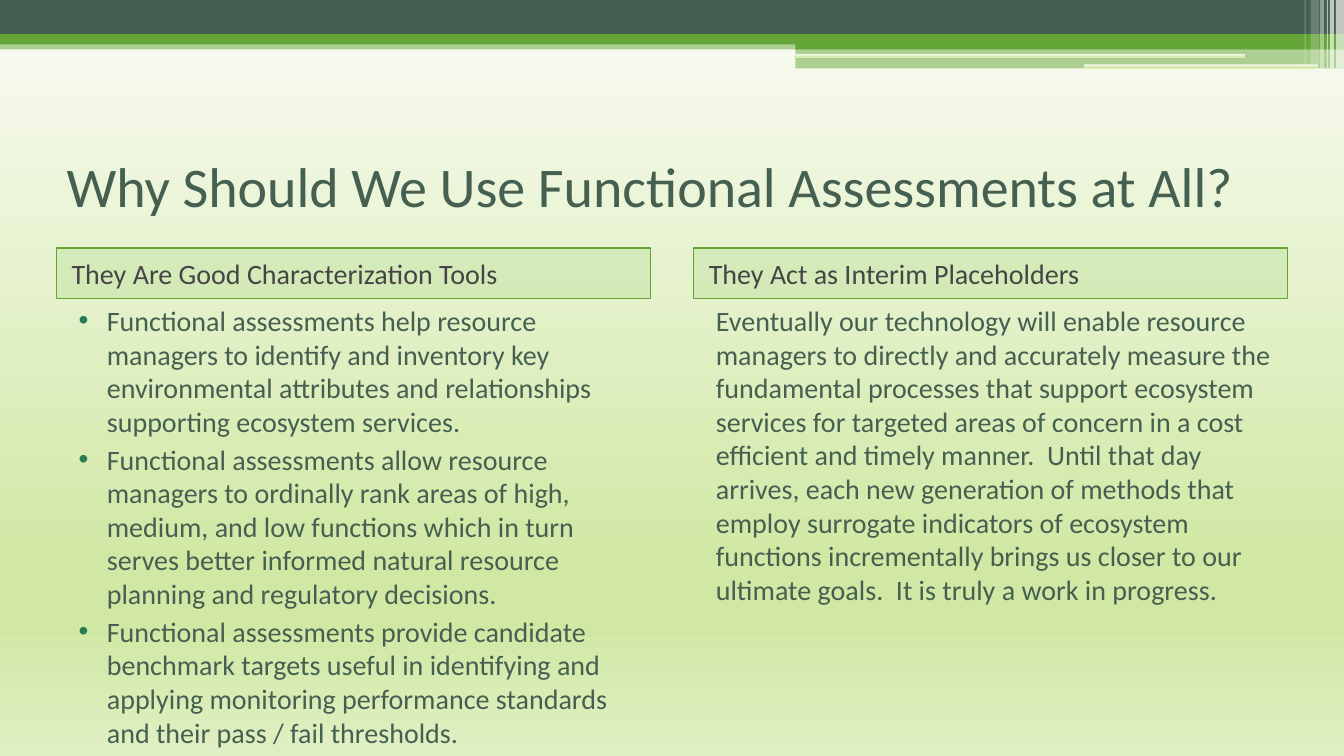
import pptx
import pptx.util
import pptx.dml.color
import pptx.enum.shapes
import pptx.enum.text
import pptx.oxml
import pptx.oxml.ns
from dataclasses import dataclass

Inches = pptx.util.Inches
Pt = pptx.util.Pt
qn = pptx.oxml.ns.qn
Anchor = pptx.enum.text.MSO_ANCHOR
Shapes = pptx.enum.shapes.MSO_SHAPE


@dataclass(frozen=True)
class Theme:
    font: str = "Calibri"
    title_size: int = 40
    text_size: int = 20
    dark: str = "455F51"
    green: str = "63A537"
    header_fill: str = "9FD47D"
    header_text: str = "454545"
    bullet: str = "297D53"
    white: str = "FFFFFF"
    backdrop: tuple = ((0, "FAFCF5"), (74, "D1E8A5"), (83, "D1E8A5"), (100, "E0EFC3"))


def rgb(color):
    return pptx.dml.color.RGBColor.from_string(color)


def add_child(parent, tag, **attributes):
    child = pptx.oxml.parse_xml(f"<{tag} {pptx.oxml.ns.nsdecls('a')}/>")
    for name, value in attributes.items():
        child.set(name, str(value))
    parent.append(child)
    return child


class Page:
    def __init__(self, deck, theme):
        self.theme = theme
        self.slide = deck.slides.add_slide(deck.slide_layouts.get_by_name("Comparison"))
        self.holders = {
            holder.placeholder_format.idx: holder for holder in self.slide.placeholders
        }
        self.backdrop(self.slide.background.fill, self.slide.element)

    def backdrop(self, fill, owner):
        """Give the fill, which lies inside owner, the page's vertical gradient."""
        fill.gradient()
        fill.gradient_angle = 270
        stops = next(owner.iter(qn("a:gsLst")))
        for stop in list(stops):
            stops.remove(stop)
        for percent, color in self.theme.backdrop:
            stop = add_child(stops, "a:gs", pos=percent * 1000)
            add_child(stop, "a:srgbClr", val=color)

    def solid(self, shape, color, opacity=100):
        shape.fill.solid()
        shape.fill.fore_color.rgb = rgb(color)
        if opacity < 100:
            tint = next(shape.element.spPr.iter(qn("a:srgbClr")))
            add_child(tint, "a:alpha", val=opacity * 1000)

    def strip(self, left, top, width, height, color=None, opacity=100):
        """Add a borderless bar; without a color it is rounded and matches the backdrop."""
        kind = Shapes.RECTANGLE if color else Shapes.ROUNDED_RECTANGLE
        bar = self.slide.shapes.add_shape(
            kind, Inches(left), Inches(top), Inches(width), Inches(height)
        )
        bar.shadow.inherit = False
        bar.line.fill.background()
        if color:
            self.solid(bar, color, opacity)
        else:
            self.backdrop(bar.fill, bar.element)

    def text(self, index, place, lines, size, color, anchor=Anchor.TOP,
             margin=0, hanging=0, before=0):
        """Fill a placeholder; a hanging indent brings bullets."""
        box = self.holders[index]
        box.left, box.top, box.width, box.height = map(Inches, place)
        frame = box.text_frame
        frame.text = "\n".join(lines)
        frame.word_wrap = True
        frame.auto_size = pptx.enum.text.MSO_AUTO_SIZE.NONE
        frame.vertical_anchor = anchor
        for para in frame.paragraphs:
            para.alignment = pptx.enum.text.PP_ALIGN.LEFT
            para.space_before = Pt(before)
            settings = para._p.get_or_add_pPr()
            settings.set("marL", str(Inches(margin)))
            settings.set("indent", str(Inches(-hanging)))
            if hanging:
                tint = add_child(settings, "a:buClr")
                add_child(tint, "a:srgbClr", val=self.theme.bullet)
                add_child(settings, "a:buFont", typeface="Arial")
                add_child(settings, "a:buChar", char="•")
            else:
                add_child(settings, "a:buNone")
            para.font.name = self.theme.font
            para.font.size = Pt(size)
            para.font.bold = False
            para.font.color.rgb = rgb(color)
        return box

    def title(self, words):
        self.text(0, (0.56, 1.25, 12.22, 1.17), [words], self.theme.title_size,
                  self.theme.dark, Anchor.MIDDLE)

    def column(self, number, heading, lines, margin, hanging=0):
        theme = self.theme
        left, width = 0.56 + 6.32 * number, 5.89
        header = self.text(1 + 2 * number, (left, 2.46, width, 0.5), [heading],
                           theme.text_size, theme.header_text, Anchor.MIDDLE,
                           margin=0.05, before=3)
        self.solid(header, theme.header_fill, 25)
        header.line.color.rgb = rgb(theme.green)
        header.line.width = Pt(1)
        self.text(2 + 2 * number, (left, 2.96, width, 4.25), lines,
                  theme.text_size, theme.dark, margin=margin, hanging=hanging, before=3)


def main():
    deck = pptx.Presentation()
    deck.slide_width, deck.slide_height = Inches(13.33), Inches(7.5)
    theme = Theme()
    page = Page(deck, theme)

    page.strip(0, 0.4, 13.33, 0.09, theme.green, 50)
    page.strip(0, 0, 13.33, 0.34, theme.dark)
    page.strip(0, 0.34, 13.33, 0.1, theme.green)
    page.strip(7.89, 0.39, 5.44, 0.1, theme.green)
    page.strip(7.89, 0.48, 5.44, 0.2, theme.green, 50)
    page.strip(7.88, 0.54, 4.47, 0.03)
    page.strip(10.75, 0.64, 2.33, 0.04)
    for left, width, height, opacity in (
        (13.25, 0.08, 0.68, 65),
        (13.19, 0.04, 0.68, 65),
        (13.16, 0.01, 0.68, 60),
        (13.09, 0.04, 0.68, 40),
        (13, 0.08, 0.64, 20),
        (12.94, 0.01, 0.64, 30),
    ):
        page.strip(left, 0, width, height, theme.white, opacity)

    page.title("Why Should We Use Functional Assessments at All?")
    page.column(0, "They Are Good Characterization Tools", [
        "Functional assessments help resource managers to identify and inventory key "
        "environmental attributes and relationships supporting ecosystem services.",
        "Functional assessments allow resource managers to ordinally rank areas of high, "
        "medium, and low functions which in turn serves better informed natural resource "
        "planning and regulatory decisions.",
        "Functional assessments provide candidate benchmark targets useful in identifying "
        "and applying monitoring performance standards and their pass / fail thresholds.",
    ], margin=0.4, hanging=0.28)
    page.column(1, "They Act as Interim Placeholders", [
        "Eventually our technology will enable resource managers to directly and accurately "
        "measure the fundamental processes that support ecosystem services for targeted "
        "areas of concern in a cost efficient and timely manner.  Until that day arrives, "
        "each new generation of methods that employ surrogate indicators of ecosystem "
        "functions incrementally brings us closer to our ultimate goals.  It is truly a "
        "work in progress.",
    ], margin=0.12)
    deck.save("out.pptx")


if __name__ == "__main__":
    main()
